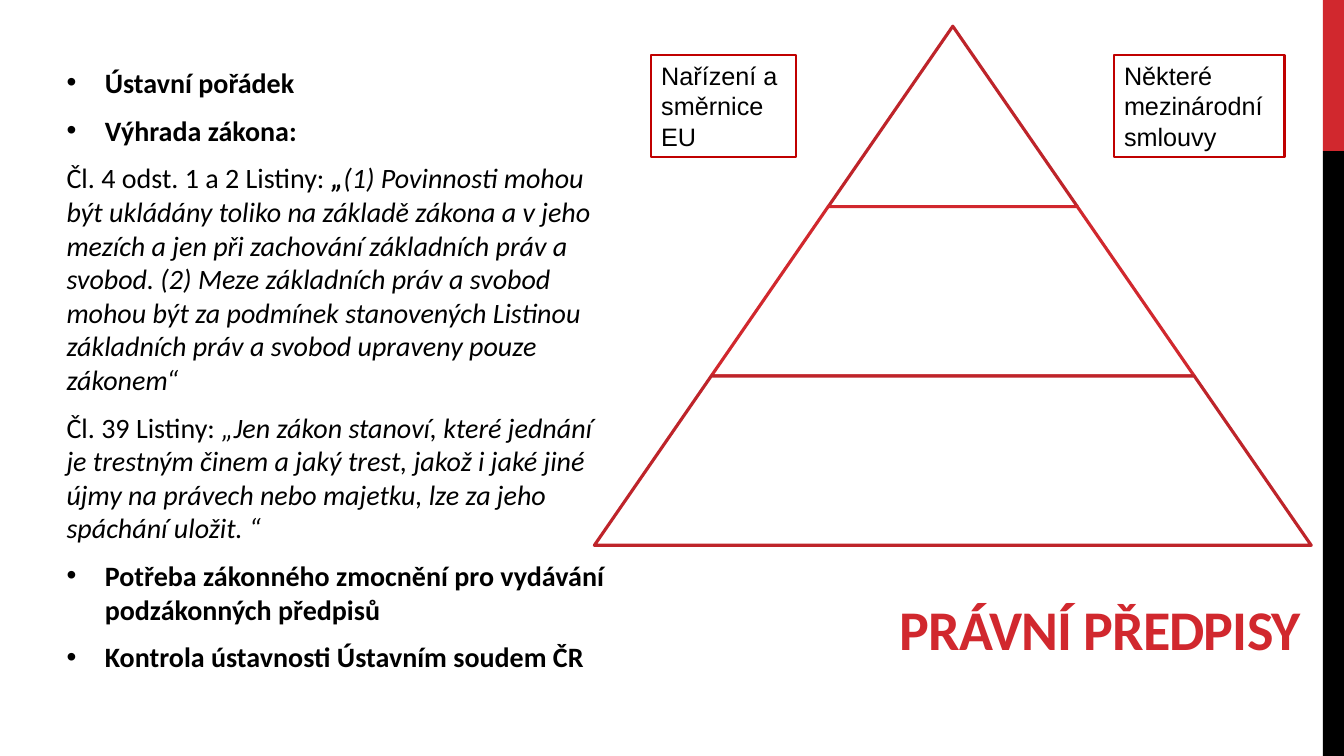
"""Build a slide on the hierarchy of legal regulations with a three-tier pyramid."""
from dataclasses import dataclass

from lxml import etree
from pptx import Presentation
from pptx.dml.color import RGBColor
from pptx.enum.shapes import MSO_SHAPE
from pptx.enum.text import MSO_ANCHOR, MSO_AUTO_SIZE, PP_ALIGN
from pptx.oxml.ns import qn
from pptx.util import Inches, Pt

RECTANGLE = MSO_SHAPE.RECTANGLE
TRAPEZOID = MSO_SHAPE.TRAPEZOID
TOP, BOTTOM = MSO_ANCHOR.TOP, MSO_ANCHOR.BOTTOM
LEFT, RIGHT = PP_ALIGN.LEFT, PP_ALIGN.RIGHT
NO_FIT, GROW = MSO_AUTO_SIZE.NONE, MSO_AUTO_SIZE.SHAPE_TO_FIT_TEXT


@dataclass(frozen=True)
class Theme:
    """Colours, fonts and sizes of the slide."""
    red: str = "D1282E"
    dark_red: str = "BE242A"
    label_red: str = "C00000"
    black: str = "000000"
    white: str = "FFFFFF"
    heading_font: str = "Calibri"
    label_font: str = "Arial"
    title_size: float = 40
    body_size: float = 20
    label_size: float = 18
    tier_line: float = 2.25
    label_line: float = 1.5
    bullet_indent: float = 0.38


def write(paragraph, text, font, size, color, bold=False, italic=False, spacing=None):
    """Add a formatted run to a paragraph."""
    run = paragraph.add_run()
    run.text = text
    run.font.name = font
    run.font.size = Pt(size)
    run.font.bold = bold
    run.font.italic = italic
    run.font.color.rgb = RGBColor.from_string(color)
    if spacing is not None:
        run.font._element.set("spc", str(round(spacing * 100)))


class SlideBuilder:
    """Hold the theme and the slide, and add each kind of element."""

    def __init__(self, slide, theme):
        """Keep the slide and its theme."""
        self.slide = slide
        self.theme = theme

    def place(self, placeholder, box, anchor):
        """Move a placeholder and return its text frame."""
        placeholder.left, placeholder.top, placeholder.width, placeholder.height = map(Inches, box)
        frame = placeholder.text_frame
        frame.word_wrap = True
        frame.auto_size = NO_FIT
        frame.vertical_anchor = anchor
        return frame

    def title(self, text, box):
        """Fill the title placeholder."""
        heading = self.place(self.slide.shapes.title, box, BOTTOM).paragraphs[0]
        heading.alignment = RIGHT
        write(heading, text, self.theme.heading_font, self.theme.title_size,
              self.theme.red, bold=True, spacing=-0.6)

    def body(self, items, box):
        """Fill the body placeholder with (bulleted, runs) items."""
        frame = self.place(self.slide.placeholders[1], box, TOP)
        for index, (bulleted, runs) in enumerate(items):
            item = frame.add_paragraph() if index else frame.paragraphs[0]
            item.alignment = LEFT
            item.space_before = Pt(self.theme.body_size * 0.2)
            item.space_after = Pt(6)
            self.bullet(item, bulleted)
            for text, style in runs:
                write(item, text, self.theme.heading_font, self.theme.body_size,
                      self.theme.black, **style)

    def bullet(self, paragraph, bulleted):
        """Switch the bullet and hanging indent of a paragraph."""
        properties = paragraph._p.get_or_add_pPr()
        indent = Inches(self.theme.bullet_indent) if bulleted else 0
        properties.set("marL", str(indent))
        properties.set("indent", str(-indent))
        if bulleted:
            etree.SubElement(properties, qn("a:buFont")).set("typeface", self.theme.label_font)
            etree.SubElement(properties, qn("a:buChar")).set("char", "•")
        else:
            etree.SubElement(properties, qn("a:buNone"))

    def shape(self, kind, box, fill=None, line=None, line_width=0, parent=None):
        """Add a preset shape to the slide or to a group."""
        shape = (parent or self.slide).shapes.add_shape(kind, *map(Inches, box))
        shape.shadow.inherit = False
        if fill:
            shape.fill.solid()
            shape.fill.fore_color.rgb = RGBColor.from_string(fill)
        else:
            shape.fill.background()
        if line:
            shape.line.color.rgb = RGBColor.from_string(line)
            shape.line.width = Pt(line_width)
        else:
            shape.line.fill.background()
        return shape

    def pyramid(self, center, top, base, tiers):
        """Stack (height, line colour) trapezoids that form one triangle."""
        group = self.slide.shapes.add_group_shape()
        total = sum(height for height, _ in tiers)
        depth = 0
        for height, color in tiers:
            y = top + depth
            depth += height
            width = base * depth / total
            tier = self.shape(TRAPEZOID, (center - width / 2, y, width, height),
                              self.theme.white, color, self.theme.tier_line, group)
            tier.adjustments[0] = base / 2 / total

    def label(self, text, box):
        """Add an outlined label."""
        frame = self.shape(RECTANGLE, box, line=self.theme.label_red,
                           line_width=self.theme.label_line).text_frame
        frame.word_wrap = True
        frame.auto_size = GROW
        frame.vertical_anchor = TOP
        frame.paragraphs[0].alignment = LEFT
        write(frame.paragraphs[0], text, self.theme.label_font,
              self.theme.label_size, self.theme.black)


def main():
    """Build and save the presentation."""
    presentation = Presentation()
    presentation.slide_width, presentation.slide_height = Inches(13.33), Inches(7.5)
    theme = Theme()
    builder = SlideBuilder(presentation.slides.add_slide(presentation.slide_layouts[1]), theme)

    plain, bold, italic = {}, {"bold": True}, {"italic": True}
    items = [
        (True, [("Ústavní pořádek", bold)]),
        (True, [("Výhrada zákona:", bold)]),
        (False, [
            ("Čl. 4 odst. 1 a 2 Listiny: ", plain),
            ("„", bold | italic),
            ("(1) Povinnosti mohou být ukládány toliko na základě zákona a v jeho mezích "
             "a jen při zachování základních práv a svobod. (2) Meze základních práv a svobod "
             "mohou být za podmínek stanovených Listinou základních práv a svobod upraveny "
             "pouze zákonem“", italic),
        ]),
        (False, [
            ("Čl. 39 Listiny: ", plain),
            ("„Jen zákon stanoví, které jednání je trestným činem a jaký trest, jakož i jaké "
             "jiné újmy na právech nebo majetku, lze za jeho spáchání uložit. “", italic),
        ]),
        (True, [("Potřeba zákonného zmocnění pro vydávání podzákonných předpisů", bold)]),
        (True, [("Kontrola ústavnosti Ústavním soudem ČR", bold)]),
    ]

    builder.shape(RECTANGLE, (13.12, 0, 0.21, 1.5), theme.red)
    builder.shape(RECTANGLE, (13.12, 1.5, 0.21, 6), theme.black)
    builder.title("PRÁVNÍ PŘEDPISY", (1.8, 5.66, 11.2, 0.95))
    builder.body(items, (0.56, 0.6, 5.64, 6.64))
    builder.pyramid(9.45, 0.26, 7.11, [(1.79, theme.dark_red), (1.68, theme.red),
                                       (1.68, theme.dark_red)])
    builder.label("Nařízení a směrnice EU", (6.46, 0.55, 1.44, 1.01))
    builder.label("Některé mezinárodní smlouvy", (11.05, 0.55, 1.69, 1.01))
    presentation.save("out.pptx")


if __name__ == "__main__":
    main()
